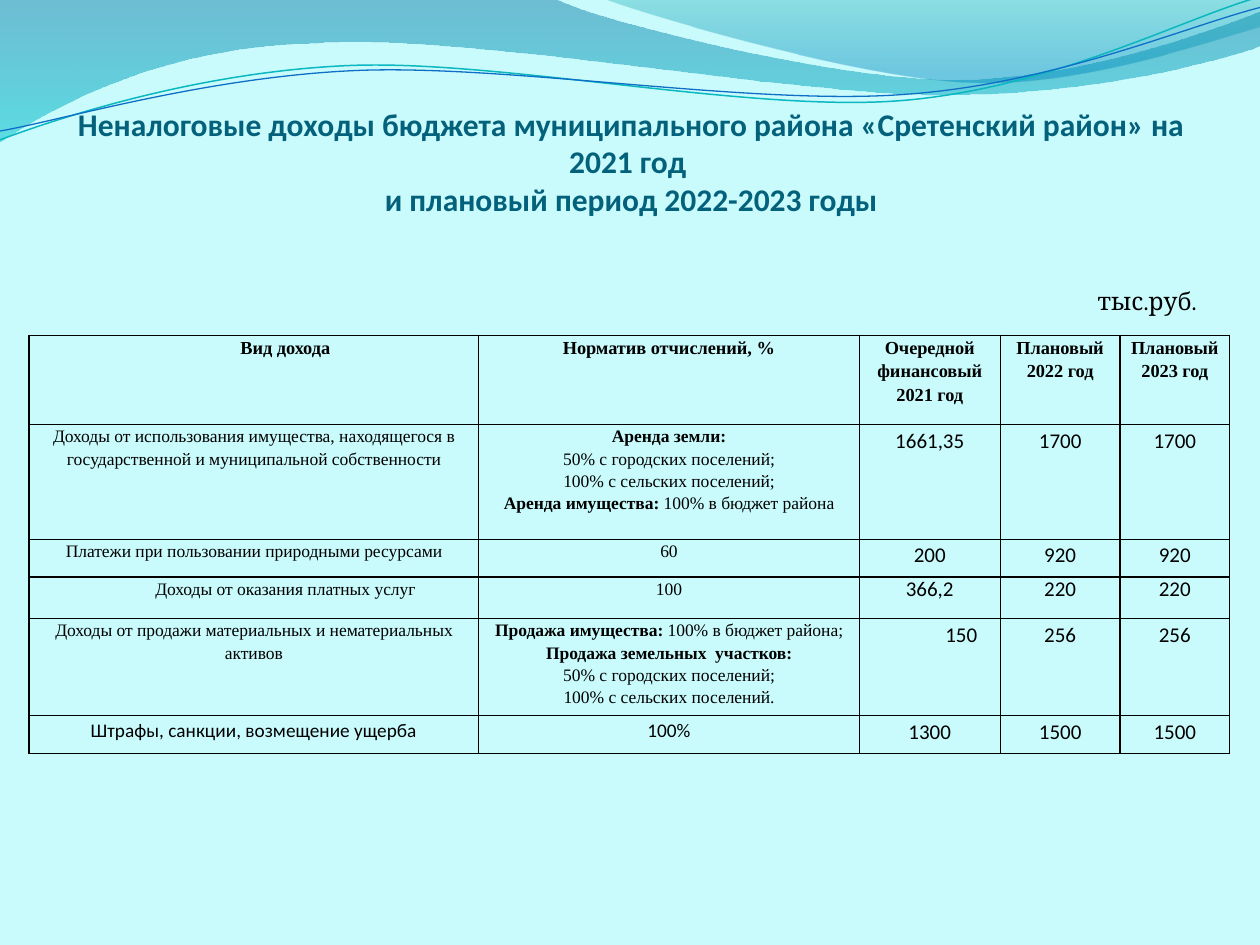
from math import cos, radians, sin

from lxml.etree import SubElement
from pptx import Presentation
from pptx.dml.color import RGBColor
from pptx.enum.text import MSO_ANCHOR as Anchor, PP_ALIGN as Align
from pptx.oxml.ns import qn
from pptx.util import Inches, Pt

PALE = RGBColor(0xC9, 0xFA, 0xFC)
BLACK = RGBColor(0, 0, 0)
NAVY = RGBColor(0x04, 0x61, 0x7B)
TEAL = RGBColor(0x0A, 0xB8, 0xBF)
BLUE = RGBColor(0x0F, 0x6F, 0xC6)
DEEP = RGBColor(0x00, 0x74, 0xA1)
AQUA = RGBColor(0x00, 0xC6, 0xCF)
GREEN = RGBColor(0x00, 0xA1, 0xA9)
SKY = RGBColor(0x00, 0x8B, 0xBF)

SERIF, SANS = "Times New Roman", "Calibri"
TILT = -2.7

# One point is a line end; three are two control points and a curve end.
BACK_WAVE = [[(0, 0)], [(4.4, -0.01)],
             [(4.76, 0.17), (6.64, 0.63), (7.58, 0.63)],
             [(8.53, 0.63), (9.58, 0.26), (10, 0.09)], [(10.01, 0.36)],
             [(9.83, 0.44), (8.7, 0.76), (7.46, 0.75)],
             [(6.22, 0.75), (3.82, 0.28), (2.57, 0.34)],
             [(1.29, 0.36), (0.46, 0.83), (-0.01, 1.13)], [(0, 0)]]
FRONT_WAVE = [[(4.79, -0.01)],
              [(5.09, 0.11), (6.82, 0.62), (7.69, 0.65)],
              [(8.56, 0.69), (9.61, 0.32), (10, 0.21)],
              [(10, 0)], [(4.79, -0.01)]]
TEAL_LINE = [[(0, 1.11)], [(0.48, 0.93), (1.58, 0.57), (2.77, 0.52)],
             [(3.95, 0.47), (5.93, 0.89), (7.13, 0.8)],
             [(8.33, 0.71), (9.38, 0.15), (9.98, -0.02)]]
BLUE_LINE = [[(0, 1.04)], [(0.47, 0.96), (1.64, 0.61), (2.83, 0.56)],
             [(4.03, 0.51), (5.97, 0.84), (7.17, 0.75)],
             [(8.36, 0.67), (9.41, 0.21), (10, 0.06)]]

COLS = [3.57, 3.02, 1.12, 0.95, 0.87]
ROWS = [0.71, 0.91, 0.3, 0.33, 0.73, 0.3]
DATA = [
    ["Вид дохода", "Норматив отчислений, %", "Очередной финансовый 2021 год",
     "Плановый 2022 год", "Плановый 2023 год"],
    ["Доходы от использования имущества, находящегося в "
     "государственной и муниципальной собственности",
     "Аренда земли:\n50% с городских поселений;\n100% с сельских поселений;\n"
     "Аренда имущества: 100% в бюджет района",
     "1661,35", "1700", "1700"],
    ["Платежи при пользовании природными ресурсами", "60",
     "200", "920", "920"],
    ["Доходы от оказания платных услуг", "100", "366,2", "220", "220"],
    ["Доходы от продажи материальных и нематериальных активов",
     "Продажа имущества: 100% в бюджет района;\n"
     "Продажа земельных  участков:\n50% с городских поселений;\n"
     "100% с сельских поселений.",
     "150", "256", "256"],
    ["Штрафы, санкции, возмещение ущерба", "100%", "1300", "1500", "1500"],
]
INDENTS = {(0, 0): 0.5, (0, 2): -0.03, (3, 0): 0.5, (4, 2): 0.5}


def turn(path, angle, mid):
    """Turn every point clockwise about mid."""
    c, s = cos(radians(angle)), sin(radians(angle))
    mx, my = mid
    return [[(mx + (x - mx) * c - (y - my) * s, my + (x - mx) * s + (y - my) * c)
             for x, y in part] for part in path]


def add_path(slide, path, close):
    points = [(Inches(x), Inches(y)) for part in path for x, y in part]
    pen = slide.shapes.build_freeform(*points[0])
    pen.add_line_segments(points[1:], close=close)
    shape = pen.convert_to_shape()
    shape.shadow.inherit = False
    bend(shape, path)
    return shape


def bend(shape, path):
    """Join each three line ends of a curve into one Bezier segment."""
    lines = iter(list(shape.element.iter(qn("a:lnTo"))))
    for part in path[1:]:
        ends = [next(lines) for _ in part]
        if len(ends) == 3:
            ends[0].tag = qn("a:cubicBezTo")
            for end in ends[1:]:
                ends[0].append(end[0])
                end.getparent().remove(end)


def add_wave(slide, path, stops):
    """Draw a filled wave; each stop is position, colour, opacity in percent."""
    wave = add_path(slide, path, True)
    wave.line.fill.background()
    wave.fill.gradient()
    wave.fill.gradient_angle = 270
    for stop, (place, color, _) in zip(wave.fill.gradient_stops, stops):
        stop.position = place
        stop.color.rgb = color
    tints = wave.element.spPr.iter(qn("a:srgbClr"))
    for tint, (_, _, alpha) in zip(list(tints), stops):
        SubElement(tint, qn("a:alpha"), val=str(alpha * 1000))


def add_curve(slide, path, mid, color, width):
    curve = add_path(slide, turn(path, -TILT, mid), False)
    curve.rotation = TILT
    curve.fill.background()
    curve.line.color.rgb = color
    curve.line.width = Pt(width)


def style(run, font, size, color=BLACK, bold=False):
    run.font.name = font
    run.font.size = Pt(size)
    run.font.color.rgb = color
    run.font.bold = bold


def add_text(slide, box, text, anchor, side, base, *look):
    frame = slide.shapes.add_textbox(*map(Inches, box)).text_frame
    frame.word_wrap = True
    frame.vertical_anchor = anchor
    frame.margin_left = frame.margin_right = Inches(side)
    frame.margin_bottom = Inches(base)
    para = frame.paragraphs[0]
    para.text = text
    para.alignment = Align.CENTER
    for run in para.runs:
        style(run, *look)


def add_border(cell):
    props = cell._tc.get_or_add_tcPr()
    for side in ("lnL", "lnR", "lnT", "lnB"):
        line = SubElement(props, qn("a:" + side), w=str(Pt(0.75)))
        fill = SubElement(line, qn("a:solidFill"))
        SubElement(fill, qn("a:srgbClr"), val=str(BLACK))


def cell_font(row, col):
    if row == 0:
        return SERIF, 10.5
    if col > 1:
        return SANS, 12
    return (SANS, 11) if row == len(ROWS) - 1 else (SERIF, 10)


def fill_cell(cell, text, row, col):
    """Write the cell; words up to a colon are bold, as is the header."""
    cell.margin_left = cell.margin_right = Inches(0.07 if row else 0.03)
    cell.margin_top = cell.margin_bottom = 0
    add_border(cell)
    cell.fill.background()
    frame = cell.text_frame
    frame.text = text
    for para in frame.paragraphs:
        head, colon, tail = para.text.partition(":")
        para.text = head + colon
        if tail:
            para.add_run().text = tail
        para.alignment = Align.CENTER
        if row != 3 or col < 2:
            para.line_spacing = 1.15
        if (row, col) in INDENTS:
            props = para._p.get_or_add_pPr()
            props.set("indent", str(Inches(INDENTS[row, col])))
        for run in para.runs:
            style(run, *cell_font(row, col),
                  bold=row == 0 or run.text.endswith(":"))


def add_grid(slide):
    frame = slide.shapes.add_table(len(ROWS), len(COLS), Inches(0.23), Inches(2.66),
                                   Inches(sum(COLS)), Inches(sum(ROWS)))
    table = frame.table
    table.first_row = table.horz_banding = False
    for col, width in zip(table.columns, COLS):
        col.width = Inches(width)
    for row, height in zip(table.rows, ROWS):
        row.height = Inches(height)
    for r, texts in enumerate(DATA):
        for c, text in enumerate(texts):
            fill_cell(table.cell(r, c), text, r, c)


def main():
    deck = Presentation()
    deck.slide_width, deck.slide_height = Inches(10), Inches(7.5)
    slide = deck.slides.add_slide(deck.slide_layouts[6])
    slide.background.fill.solid()
    slide.background.fill.fore_color.rgb = PALE

    add_wave(slide, BACK_WAVE, [(0, DEEP, 45), (1, AQUA, 55)])
    add_wave(slide, FRONT_WAVE, [(0, GREEN, 30), (0.8, SKY, 45)])
    add_curve(slide, TEAL_LINE, (4.99, 0.58), TEAL, 0.85)
    add_curve(slide, BLUE_LINE, (5, 0.59), BLUE, 0.75)

    add_text(slide, (0.47, 1.02, 9.08, 0.71),
             "Неналоговые доходы бюджета муниципального района "
             "«Сретенский район» на 2021 год \vи плановый период 2022-2023 годы",
             Anchor.BOTTOM, 0, 0, SANS, 18, NAVY, True)
    add_grid(slide)
    add_text(slide, (8.44, 2.27, 1.33, 0.23), "тыс.руб.",
             Anchor.MIDDLE, 0.1, 0.05, "Cambria", 14)
    deck.save("out.pptx")


if __name__ == "__main__":
    main()
